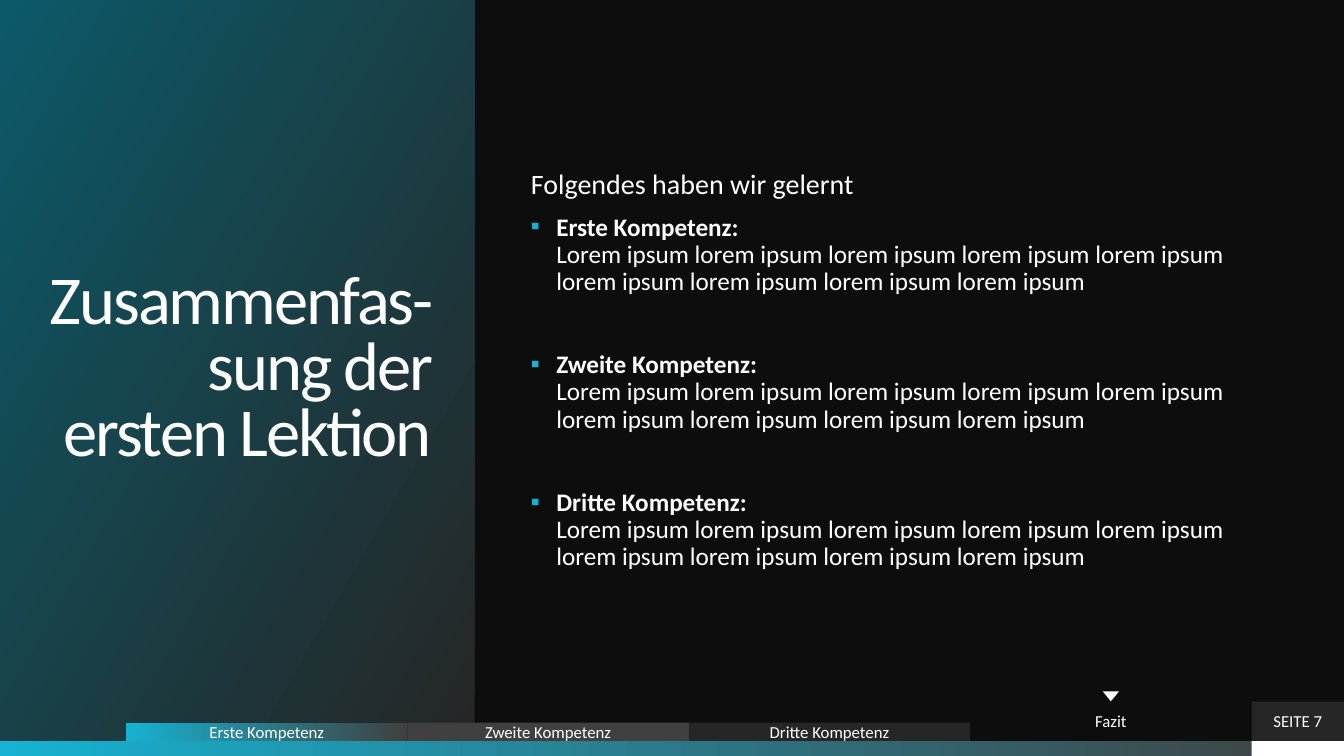
"""Build the summary slide of the first lesson."""
from dataclasses import dataclass

from lxml import etree
from pptx import Presentation
from pptx.dml.color import RGBColor
from pptx.enum.shapes import MSO_SHAPE
from pptx.enum.text import MSO_ANCHOR, MSO_AUTO_SIZE, PP_ALIGN
from pptx.oxml.ns import qn
from pptx.util import Cm, Pt

RECTANGLE = MSO_SHAPE.RECTANGLE
TRIANGLE = MSO_SHAPE.ISOSCELES_TRIANGLE
MIDDLE = MSO_ANCHOR.MIDDLE
NO_AUTOFIT = MSO_AUTO_SIZE.NONE
CENTER, RIGHT, LEFT = PP_ALIGN.CENTER, PP_ALIGN.RIGHT, PP_ALIGN.LEFT

FONT = "Calibri"
COLORS = {
    "background": "0D0D0D",
    "white": "FFFFFF",
    "accent": "17B2D1",
    "teal": "0C5968",
    "gray": "404040",
    "dark": "262626",
}
SLIDE_WIDTH, SLIDE_HEIGHT = 33.87, 19.05
BAR_TOP, BAR_HEIGHT = 18.67, 0.38
PAGE_LEFT, PAGE_WIDTH = 31.54, 2.33
TAB_LEFT, TAB_WIDTH = 3.18, 7.09
LOW_TAB, HIGH_TAB = 0.46, 0.99
BULLET_INDENT = 0.64
SKILLS = ("Erste Kompetenz", "Zweite Kompetenz", "Dritte Kompetenz")
DESCRIPTION = " ".join(["Lorem ipsum"] + ["lorem ipsum"] * 8)


@dataclass(frozen=True)
class Block:
    """A filled shape, in centimetres, with an optional label."""

    left: float
    top: float
    width: float
    height: float
    colors: tuple[str, ...]
    label: str = ""
    geometry: MSO_SHAPE = RECTANGLE
    rotation: float = 0


def tab(index: int, label: str, height: float, *colors: str) -> Block:
    """Describe a navigation tab standing on the bottom bar."""
    return Block(TAB_LEFT + index * TAB_WIDTH, BAR_TOP - height, TAB_WIDTH, height, colors, label)


BARS = (
    Block(0, BAR_TOP, SLIDE_WIDTH, BAR_HEIGHT, ("accent", "gray")),
    Block(PAGE_LEFT, BAR_TOP, PAGE_WIDTH, BAR_HEIGHT, ("white",)),
)
NAVIGATION = (
    Block(PAGE_LEFT, BAR_TOP - HIGH_TAB, PAGE_WIDTH, HIGH_TAB, ("dark",), "SEITE 7"),
    tab(0, SKILLS[0], LOW_TAB, "accent", "gray"),
    tab(1, SKILLS[1], LOW_TAB, "gray"),
    tab(2, SKILLS[2], LOW_TAB, "dark"),
    tab(3, "Fazit", HIGH_TAB, "background"),
    Block(27.79, 17.42, 0.41, 0.25, ("white",), geometry=TRIANGLE, rotation=180),
)


def rgb(name: str) -> RGBColor:
    """Look up a named colour."""
    return RGBColor.from_string(COLORS[name])


def paint(shape, colors: tuple[str, ...], angle: float = 0) -> None:
    """Fill a shape with one colour or a two-colour gradient."""
    if len(colors) == 1:
        shape.fill.solid()
        shape.fill.fore_color.rgb = rgb(colors[0])
        return
    shape.fill.gradient()
    shape.fill.gradient_angle = angle
    for position, (stop, color) in enumerate(zip(shape.fill.gradient_stops, colors)):
        stop.position = position
        stop.color.rgb = rgb(color)


def prepare_frame(shape, horizontal: float, vertical: float):
    """Wrap and vertically centre the text of a shape."""
    frame = shape.text_frame
    frame.word_wrap = True
    frame.auto_size = NO_AUTOFIT
    frame.vertical_anchor = MIDDLE
    frame.margin_left = frame.margin_right = Cm(horizontal)
    frame.margin_top = frame.margin_bottom = Cm(vertical)
    return frame


def style(paragraph, size: float, alignment: PP_ALIGN) -> None:
    """Set the font and alignment of a paragraph."""
    paragraph.alignment = alignment
    paragraph.font.name = FONT
    paragraph.font.size = Pt(size)
    paragraph.font.color.rgb = rgb("white")


def add_block(slide, block: Block) -> None:
    """Draw a block and its label."""
    shape = slide.shapes.add_shape(
        block.geometry, Cm(block.left), Cm(block.top), Cm(block.width), Cm(block.height)
    )
    shape.shadow.inherit = False
    shape.line.fill.background()
    shape.rotation = block.rotation
    paint(shape, block.colors)
    if block.label:
        paragraph = prepare_frame(shape, 0.25, 0).paragraphs[0]
        paragraph.text = block.label
        style(paragraph, 12, CENTER)


def add_bullet(paragraph) -> None:
    """Give a paragraph a hanging square bullet."""
    properties = paragraph._p.get_or_add_pPr()
    properties.set("marL", str(Cm(BULLET_INDENT)))
    properties.set("indent", str(-Cm(BULLET_INDENT)))
    color = etree.SubElement(properties, qn("a:buClr"))
    etree.SubElement(color, qn("a:srgbClr"), val=COLORS["accent"])
    etree.SubElement(properties, qn("a:buFont"), typeface=FONT)
    etree.SubElement(properties, qn("a:buChar"), char="▪")


def format_title(slide) -> None:
    """Turn the title placeholder into the left panel."""
    title = slide.shapes.title
    title.left, title.top, title.width, title.height = Cm(0), Cm(0), Cm(11.96), Cm(BAR_TOP)
    paint(title, ("dark", "teal"), 150)
    paragraph = prepare_frame(title, 1.09, 0).paragraphs[0]
    run = paragraph.add_run()
    run.text = "Zusammenfas-sung der ersten Lektion"
    run._r.get_or_add_rPr().set("spc", "-150")
    paragraph.line_spacing = 0.8
    style(paragraph, 49, RIGHT)


def add_summary(slide) -> None:
    """Write the list of learned skills."""
    box = slide.shapes.add_textbox(Cm(13.08), Cm(1.02), Cm(18.47), Cm(16.64))
    frame = prepare_frame(box, 0.3, 0.3)
    heading = frame.paragraphs[0]
    heading.text = "Folgendes haben wir gelernt"
    heading.line_spacing = 0.9
    style(heading, 20, LEFT)
    for index, skill in enumerate(SKILLS):
        paragraph = frame.add_paragraph()
        add_bullet(paragraph)
        paragraph.line_spacing = 0.9
        paragraph.space_before = Pt(40 if index else 10)
        style(paragraph, 18, LEFT)
        name = paragraph.add_run()
        name.text = f"{skill}:"
        name.font.bold = True
        paragraph.add_line_break()
        paragraph.add_run().text = DESCRIPTION


def main() -> None:
    """Build and save the presentation."""
    presentation = Presentation()
    presentation.slide_width = Cm(SLIDE_WIDTH)
    presentation.slide_height = Cm(SLIDE_HEIGHT)
    slide = presentation.slides.add_slide(presentation.slide_layouts[5])
    slide.background.fill.solid()
    slide.background.fill.fore_color.rgb = rgb("background")
    for bar in BARS:
        add_block(slide, bar)
    format_title(slide)
    add_summary(slide)
    for block in NAVIGATION:
        add_block(slide, block)
    presentation.save("out.pptx")


if __name__ == "__main__":
    main()
